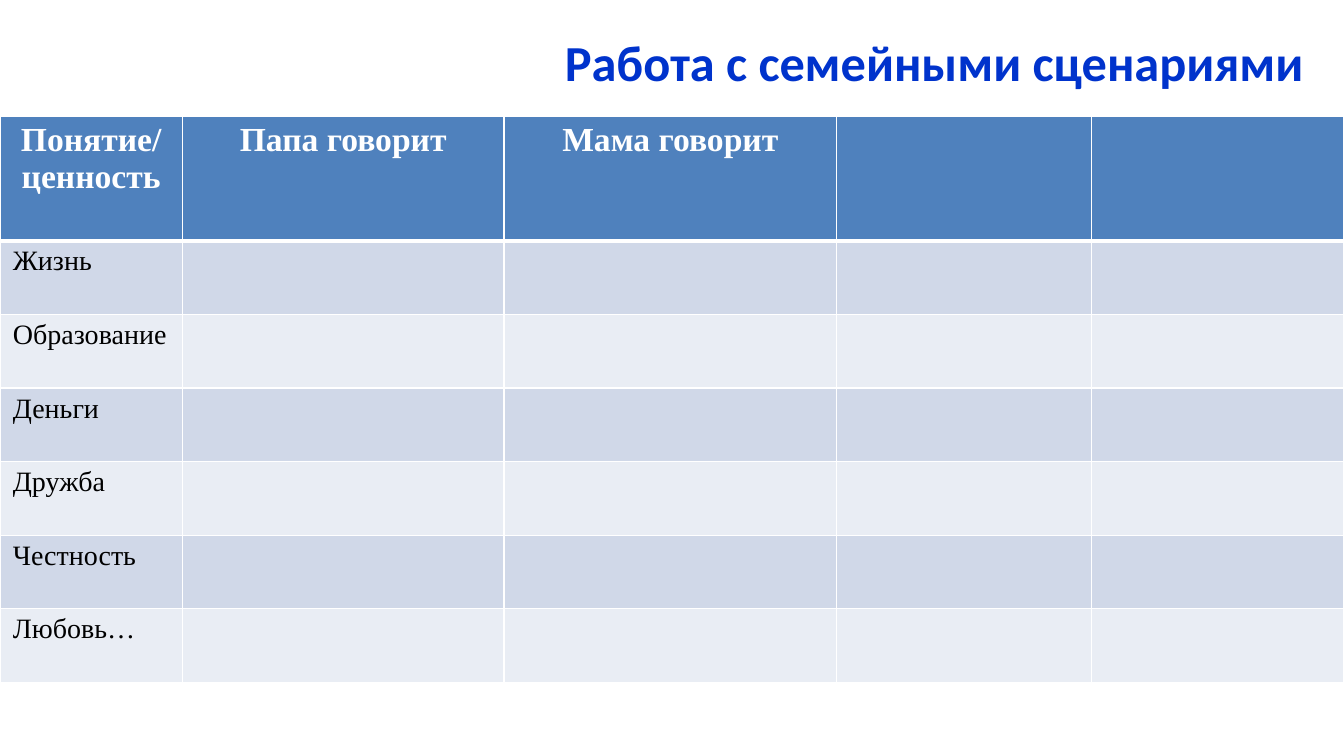
from dataclasses import dataclass

from lxml import etree
from pptx import Presentation
from pptx.dml.color import RGBColor
from pptx.enum.text import MSO_ANCHOR, PP_ALIGN
from pptx.oxml.ns import qn
from pptx.util import Pt

CENTER, LEFT = PP_ALIGN.CENTER, PP_ALIGN.LEFT
MIDDLE, TOP = MSO_ANCHOR.MIDDLE, MSO_ANCHOR.TOP
TITLE_ONLY = 5


@dataclass(frozen=True)
class Theme:
    title_color: str = "0033CC"
    header_fill: str = "4F81BD"
    bands: tuple = ("D0D8E8", "E9EDF4")
    line: str = "FFFFFF"
    header_text: str = "FFFFFF"
    body_text: str = "000000"
    title_font: str = "Calibri"
    table_font: str = "Times New Roman"
    title_size: int = 36
    header_size: int = 24
    body_size: int = 20
    thin: int = 1
    thick: int = 3


class SlideBuilder:
    def __init__(self, slide, theme):
        self.s = slide
        self.theme = theme

    def add_text(self, p, text, align, color, **font):
        p.alignment = align
        r = p.add_run()
        r.text = text
        for name, value in font.items():
            setattr(r.font, name, value)
        r.font.color.rgb = RGBColor.from_string(color)

    def title(self, text, left, top, width, height):
        t = self.theme
        sp = self.s.shapes.title
        box = dict(left=left, top=top, width=width, height=height)
        for name, value in box.items():
            setattr(sp, name, Pt(value))
        tf = sp.text_frame
        tf.word_wrap = True
        tf.vertical_anchor = MIDDLE
        self.add_text(tf.paragraphs[0], text, CENTER, t.title_color,
                      name=t.title_font, size=Pt(t.title_size), bold=True)

    def borders(self, cell, **widths):
        tc_pr = cell._tc.get_or_add_tcPr()
        for side in "LRTB":
            width = widths.get(side, self.theme.thin)
            ln = etree.SubElement(tc_pr, qn(f"a:ln{side}"), w=str(Pt(width)))
            fill = etree.SubElement(ln, qn("a:solidFill"))
            etree.SubElement(fill, qn("a:srgbClr"), val=self.theme.line)

    def cell(self, cell, text, row):
        t = self.theme
        header = row == 0
        margins = dict(margin_left=9.2, margin_right=9.2,
                       margin_top=3.6, margin_bottom=3.6)
        for name, value in margins.items():
            setattr(cell, name, Pt(value))
        cell.vertical_anchor = TOP
        # The rule under the header is shared by the first two rows
        self.borders(cell, **{0: {"B": t.thick}, 1: {"T": t.thick}}.get(row, {}))
        cell.fill.solid()
        fill = t.header_fill if header else t.bands[(row - 1) % len(t.bands)]
        cell.fill.fore_color.rgb = RGBColor.from_string(fill)
        if text:
            self.add_text(cell.text_frame.paragraphs[0], text,
                          CENTER if header else LEFT,
                          t.header_text if header else t.body_text,
                          name=t.table_font, bold=header,
                          size=Pt(t.header_size if header else t.body_size))

    def table(self, rows, left, top, widths, heights):
        frame = self.s.shapes.add_table(
            len(heights), len(widths), Pt(left), Pt(top),
            Pt(sum(widths)), Pt(sum(heights)))
        table = frame.table
        table.horz_banding = False
        for column, width in zip(table.columns, widths):
            column.width = Pt(width)
        for i, (row, height) in enumerate(zip(table.rows, heights)):
            row.height = Pt(height)
            for j, cell in enumerate(row.cells):
                self.cell(cell, rows[i][j] if j < len(rows[i]) else "", i)


def main():
    prs = Presentation()
    prs.slide_width, prs.slide_height = Pt(960), Pt(540)
    slide = SlideBuilder(prs.slides.add_slide(prs.slide_layouts[TITLE_ONLY]), Theme())

    # Title
    slide.title("Работа с семейными сценариями", 389.5, 13.7, 556, 59.8)

    # Table of values, with answer columns left blank
    header = ["Понятие/ ценность", "Папа говорит", "Мама говорит"]
    values = ["Жизнь", "Образование", "Деньги", "Дружба", "Честность", "Любовь…"]
    slide.table([header] + [[value] for value in values], 0, 83,
                widths=[130.3, 229.7, 237.6, 182.2, 180.2],
                heights=[89] + [52.6] * len(values))

    prs.save("out.pptx")


if __name__ == "__main__":
    main()
